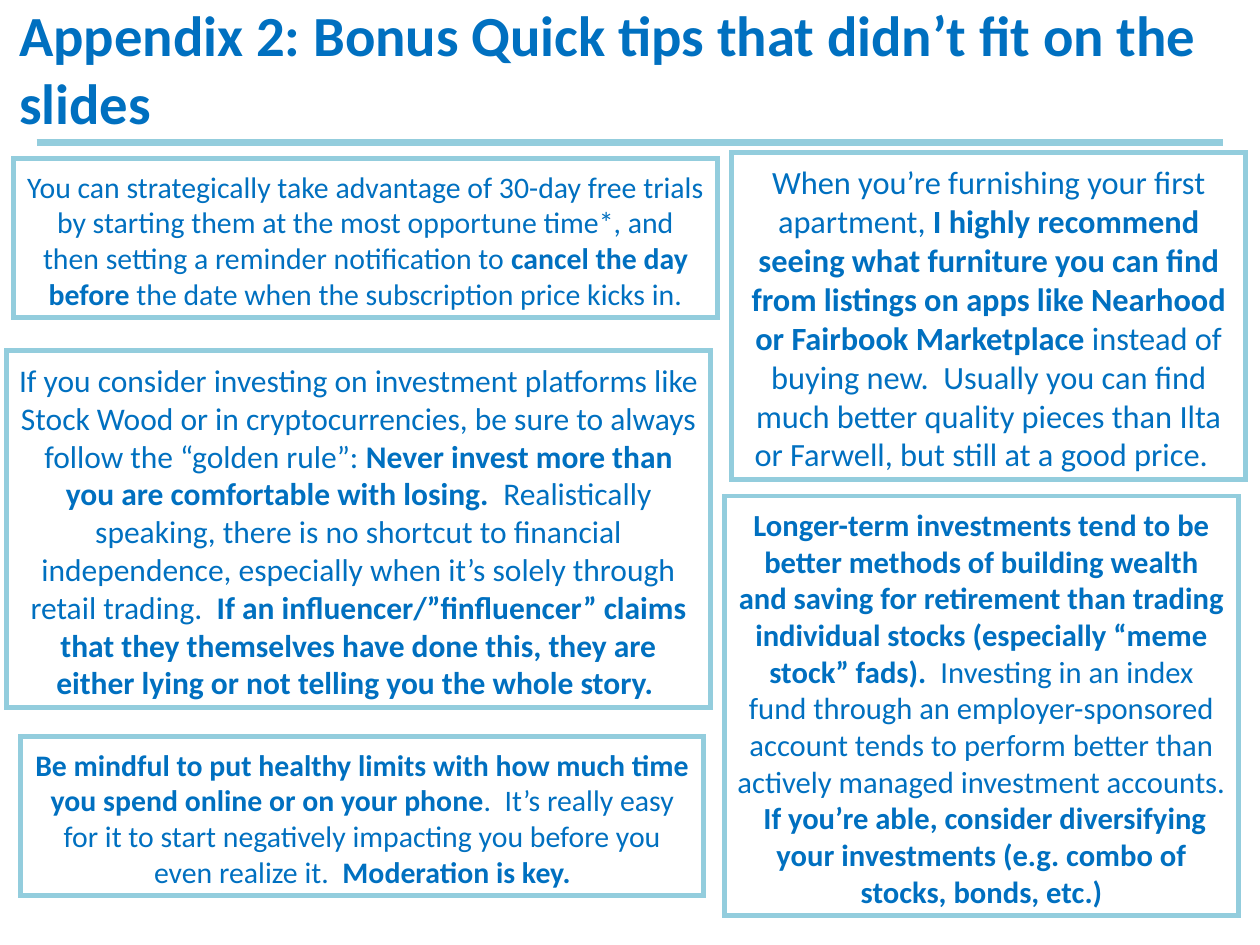
from lxml.etree import SubElement
from pptx import Presentation
from pptx.dml.color import RGBColor
from pptx.enum.shapes import MSO_CONNECTOR, MSO_SHAPE
from pptx.enum.text import MSO_ANCHOR, MSO_AUTO_SIZE, PP_ALIGN
from pptx.oxml.ns import qn
from pptx.util import Cm, Pt

COLORS = {"text": "0070C0", "border": "93CDDD"}
FONT = "Calibri"

HEADER_BOX = (0.13, 0.33, 24.56, 2.54)
TITLE = "Appendix 2: Bonus Quick tips that didn’t fit on the slides"

# Each tip: box in cm (left, top, width, height), text size, spans of (text, bold)
TIPS = [
    ((0.27, 3.2, 14.2, 3.2), 17, [
        ("You can strategically take advantage of 30-day free trials by starting them at the "
         "most opportune time*, and then setting a reminder notification to ", False),
        ("cancel the day before ", True),
        ("the date when the subscription price kicks in.", False),
    ]),
    ((14.75, 3.07, 10.36, 6.6), 18.5, [
        ("When you’re furnishing your first apartment, ", False),
        ("I highly recommend seeing what furniture you can find from listings on apps like "
         "Nearhood or Fairbook Marketplace", True),
        (" instead of buying new.  Usually you can find much better quality pieces than Ilta "
         "or Farwell, but still at a good price.  ", False),
    ]),
    ((0.13, 7.07, 14.2, 7.19), 18, [
        ("If you consider investing on investment platforms like Stock Wood or in "
         "cryptocurrencies, be sure to always follow the “golden rule”: ", False),
        ("Never invest more than you are comfortable with losing.  ", True),
        ("Realistically speaking, there is no shortcut to financial independence, especially "
         "when it’s solely through retail trading.  ", False),
        ("If an influencer/”finfluencer” claims that they themselves have done this, they are "
         "either lying or not telling you the whole story. ", True),
    ]),
    ((14.61, 10.0, 10.36, 8.46), 17.5, [
        ("Longer-term investments tend to be better methods of building wealth and saving for "
         "retirement than trading individual stocks (especially “meme stock” fads).", True),
        ("  Investing in an index fund through an employer-sponsored account tends to perform "
         "better than actively managed investment accounts.  ", False),
        ("If you’re able, consider diversifying your investments (e.g. combo of stocks, bonds, "
         "etc.)", True),
    ]),
    ((0.42, 14.85, 13.77, 3.2), 17, [
        ("Be mindful to put healthy limits with how much time you spend online or on your "
         "phone", True),
        (".  It’s really easy for it to start negatively impacting you before you even realize "
         "it.  ", False),
        ("Moderation is key.", True),
    ]),
]


def set_all(target, values):
    for name, value in values.items():
        setattr(target, name, value)


def write_spans(shape, spans, size, alignment):
    set_all(shape.text_frame, {
        "word_wrap": True,
        "auto_size": MSO_AUTO_SIZE.NONE,
        "vertical_anchor": MSO_ANCHOR.BOTTOM,
    })
    para = shape.text_frame.paragraphs[0]
    para.alignment = alignment
    for text, bold in spans:
        span = para.add_run()
        span.text = text
        set_all(span.font, {"name": FONT, "size": Pt(size), "bold": bold})
        span.font.color.rgb = RGBColor.from_string(COLORS["text"])


def style_line(line, width):
    line.color.rgb = RGBColor.from_string(COLORS["border"])
    line.width = Pt(width)


def add_header(page, box):
    left, top, width, height = box
    title = page.shapes.title
    set_all(title, {"left": Cm(left), "top": Cm(top), "width": Cm(width), "height": Cm(height)})
    write_spans(title, [(TITLE, True)], 32.4, PP_ALIGN.LEFT)

    # Rule along the bottom of the header
    start, bottom = left + 0.61, top + height
    rule = page.shapes.add_connector(
        MSO_CONNECTOR.STRAIGHT, Cm(start), Cm(bottom), Cm(start + 23.92), Cm(bottom))
    style_line(rule.line, 4)
    SubElement(rule.element.spPr, qn("a:effectLst"))


def add_tip(page, box, size, spans):
    frame = page.shapes.add_shape(MSO_SHAPE.RECTANGLE, *map(Cm, box))
    frame.shadow.inherit = False
    frame.fill.background()
    style_line(frame.line, 2.75)
    # Square border corners
    SubElement(frame.element.spPr.find(qn("a:ln")), qn("a:miter"), lim="800000")
    write_spans(frame, spans, size, PP_ALIGN.CENTER)


def main():
    deck = Presentation()
    set_all(deck, {"slide_width": Cm(25.4), "slide_height": Cm(19.05)})
    page = deck.slides.add_slide(deck.slide_layouts[5])
    add_header(page, HEADER_BOX)
    for box, size, spans in TIPS:
        add_tip(page, box, size, spans)
    deck.save("out.pptx")


if __name__ == "__main__":
    main()
